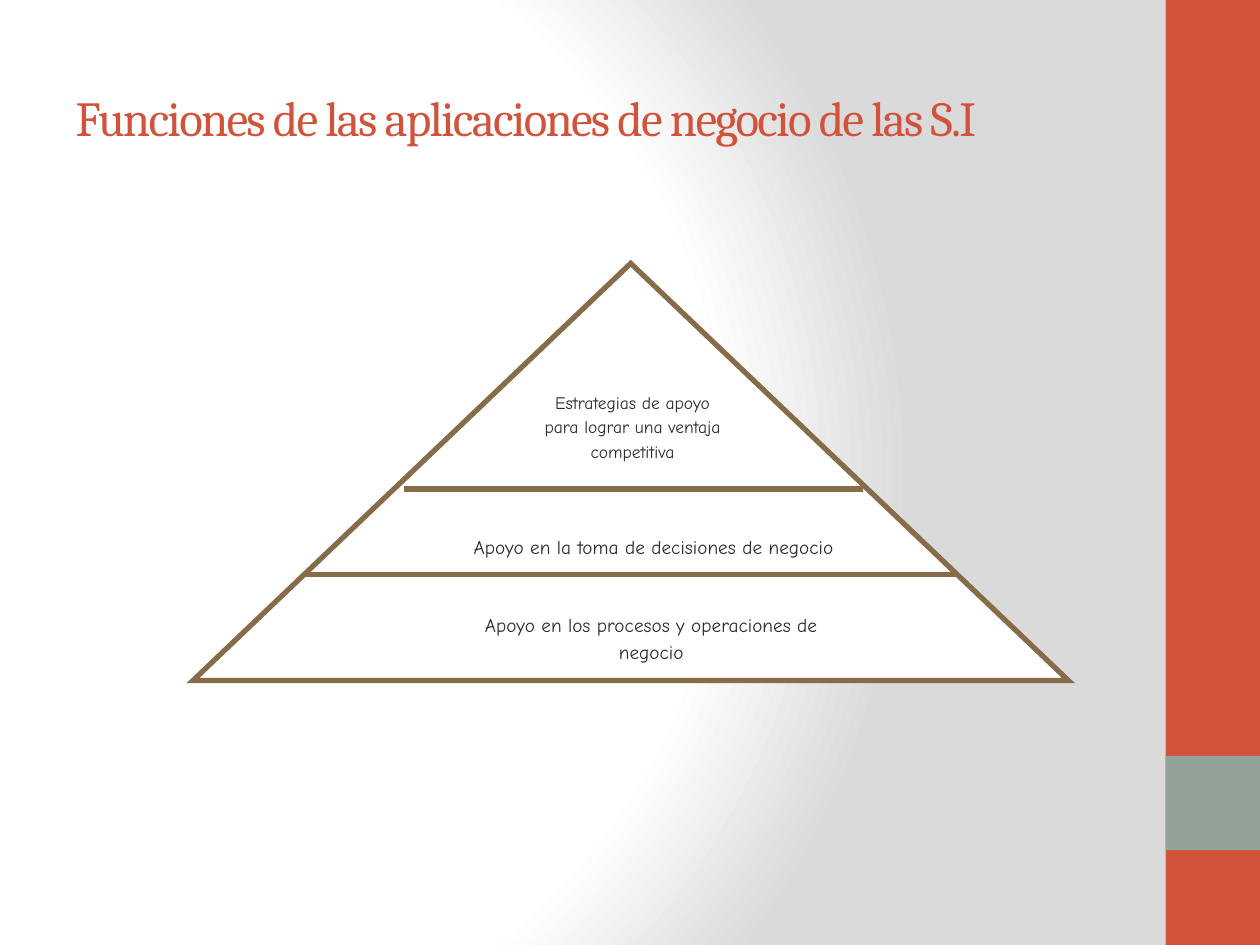
from lxml.etree import SubElement
from pptx import Presentation
from pptx.dml.color import RGBColor
from pptx.enum.shapes import MSO_CONNECTOR, MSO_SHAPE
from pptx.enum.text import MSO_ANCHOR, MSO_AUTO_SIZE, PP_ALIGN
from pptx.oxml import parse_xml
from pptx.oxml.ns import nsdecls, qn
from pptx.util import Cm, Pt

COLORS = {
    "red": "D2533C",
    "sage": "93A299",
    "brown": "866C49",
    "text": "292934",
    "white": "FFFFFF",
    "grey": "DADADA",
}


def rgb(name):
    return RGBColor.from_string(COLORS[name])


def add_filled(s, kind, box, color):
    """Add a shape without outline or shadow; box is left, top, width, height in cm."""
    sp = s.shapes.add_shape(kind, *[Cm(v) for v in box])
    sp.shadow.inherit = False
    sp.fill.solid()
    sp.fill.fore_color.rgb = rgb(color)
    sp.line.fill.background()
    return sp


prs = Presentation()
prs.slide_width, prs.slide_height = Cm(25.4), Cm(19.05)
s = prs.slides.add_slide(prs.slide_layouts[5])

# Radial background
s.background.fill.solid()
bg = s.element.cSld.bg.bgPr
stops = "".join(
    f'<a:gs pos="{pos * 1000}"><a:srgbClr val="{COLORS[color]}"/></a:gs>'
    for pos, color in [(0, "white"), (75, "white"), (100, "grey")]
)
bg.replace(bg[0], parse_xml(
    f'<a:gradFill {nsdecls("a")} rotWithShape="1"><a:gsLst>{stops}</a:gsLst>'
    '<a:path path="circle"><a:fillToRect l="20000" t="50000" r="100000" b="50000"/>'
    '</a:path></a:gradFill>'
))

# Side band
add_filled(s, MSO_SHAPE.RECTANGLE, (23.5, 0, 1.9, 19.05), "red")
add_filled(s, MSO_SHAPE.RECTANGLE, (23.5, 15.24, 1.9, 1.9), "sage")

# Title
title = s.shapes.title
title.left, title.top, title.width, title.height = Cm(1.27), Cm(0.76), Cm(21.16), Cm(3.18)
tf = title.text_frame
tf.text = "Funciones de las aplicaciones de negocio de las S.I"
tf.auto_size = MSO_AUTO_SIZE.NONE
tf.vertical_anchor = MSO_ANCHOR.MIDDLE
p = tf.paragraphs[0]
p.alignment = PP_ALIGN.LEFT
r = p.runs[0]
r.font.name, r.font.size = "Cambria", Pt(28)
r.font.color.rgb = rgb("red")
r.font._element.set("spc", "-100")

# Pyramid
pyramid = add_filled(s, MSO_SHAPE.ISOSCELES_TRIANGLE, (3.89, 5.31, 17.65, 8.41), "white")
pyramid.line.color.rgb = rgb("brown")
pyramid.line.width = Pt(3)
SubElement(pyramid.line._get_or_add_ln(), qn("a:miter"), lim="800000")

levels = [
    ("Estrategias de apoyo para lograr una ventaja competitiva", 10, (10.72, 7.72, 4.06, 2.13)),
    ("Apoyo en la toma de decisiones de negocio", 11, (9.09, 10.59, 8.18, 0.97)),
    ("Apoyo en los procesos y operaciones de negocio", 11, (9.04, 12.17, 8.18, 1.42)),
]
for text, size, box in levels:
    sp = add_filled(s, MSO_SHAPE.RECTANGLE, box, "white")
    tf = sp.text_frame
    tf.text = text
    tf.word_wrap = True
    tf.vertical_anchor = MSO_ANCHOR.TOP
    p = tf.paragraphs[0]
    p.alignment = PP_ALIGN.CENTER
    p.line_spacing = 1.15
    p.space_after = Pt(10)
    r = p.runs[0]
    r.font.name, r.font.size = "Comic Neue", Pt(size)
    r.font.color.rgb = rgb("text")

# Level dividers
for x1, x2, y in [(8.15, 17.4, 9.86), (6.12, 19.28, 11.58)]:
    divider = s.shapes.add_connector(MSO_CONNECTOR.STRAIGHT, Cm(x1), Cm(y), Cm(x2), Cm(y))
    divider.line.color.rgb = rgb("brown")
    divider.line.width = Pt(3)
    SubElement(divider._element.spPr, qn("a:effectLst"))

prs.save("out.pptx")
